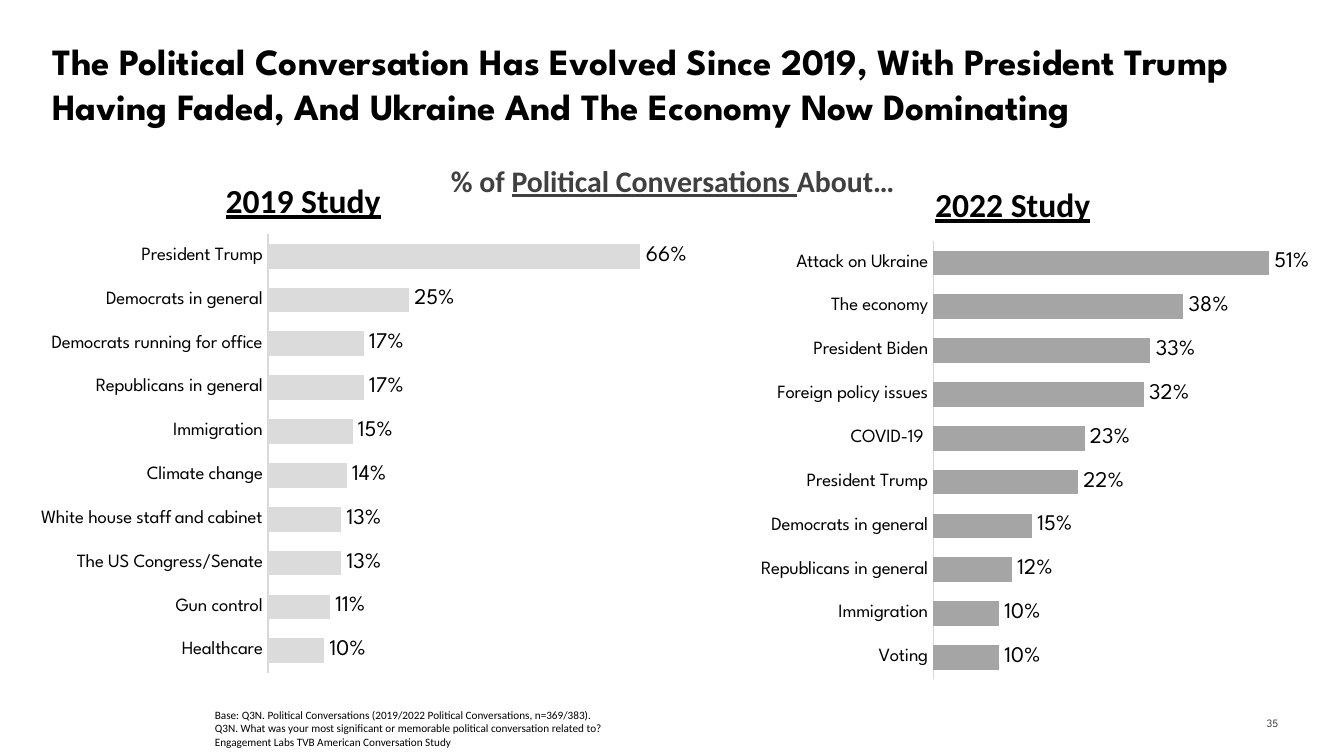
"""Build a slide comparing political conversation topics in 2019 and 2022."""
from lxml.etree import SubElement
from pptx import Presentation
from pptx.chart.data import CategoryChartData
from pptx.dml.color import RGBColor
from pptx.enum.chart import XL_CHART_TYPE, XL_LABEL_POSITION, XL_TICK_LABEL_POSITION, XL_TICK_MARK
from pptx.enum.text import MSO_ANCHOR, MSO_AUTO_SIZE, PP_ALIGN
from pptx.oxml.ns import qn
from pptx.util import Inches, Pt

HEADING_FONT = "League Spartan"
BODY_FONT = "Calibri"
BLACK = "000000"

TOPICS_2019 = {
    "President Trump": 0.66,
    "Democrats in general": 0.25,
    "Democrats running for office": 0.17,
    "Republicans in general": 0.17,
    "Immigration": 0.15,
    "Climate change": 0.14,
    "White house staff and cabinet": 0.13,
    "The US Congress/Senate": 0.13,
    "Gun control": 0.11,
    "Healthcare": 0.1,
}
TOPICS_2022 = {
    "Attack on Ukraine": 0.51,
    "The economy": 0.38,
    "President Biden": 0.33,
    "Foreign policy issues": 0.32,
    "COVID-19 ": 0.23,
    "President Trump": 0.22,
    "Democrats in general": 0.15,
    "Republicans in general": 0.12,
    "Immigration": 0.1,
    "Voting": 0.1,
}
FOOTNOTES = [
    "Base: Q3N. Political Conversations (2019/2022 Political Conversations, n=369/383).",
    "Q3N. What was your most significant or memorable political conversation related to?",
    "Engagement Labs TVB American Conversation Study",
]


def color(hex_string):
    """Return the colour for a hex string."""
    return RGBColor.from_string(hex_string)


def format_font(font, size, name=BODY_FONT, fill=BLACK, bold=False):
    """Apply size, typeface, colour and weight to a font."""
    font.size = Pt(size)
    font.name = name
    font.bold = bold
    font.color.rgb = color(fill)


def add_text(paragraph, text, underline=False, **style):
    """Append a formatted run to a paragraph."""
    run = paragraph.add_run()
    run.text = text
    format_font(run.font, **style)
    run.font.underline = underline


class SlideBuilder:
    """Hold the chart style and the current slide."""

    axis_color = "D9D9D9"
    gap_width = 77
    plot_area = {"x": 0.405, "y": 0.043, "w": 0.526, "h": 0.914}

    def __init__(self, slide):
        """Keep the slide to draw on."""
        self.slide = slide

    def title(self, text, left, top, width, height):
        """Fill and place the title placeholder."""
        shape = self.slide.shapes.title
        shape.left, shape.top = Inches(left), Inches(top)
        shape.width, shape.height = Inches(width), Inches(height)
        frame = shape.text_frame
        frame.auto_size = MSO_AUTO_SIZE.NONE
        frame.vertical_anchor = MSO_ANCHOR.MIDDLE
        paragraph = frame.paragraphs[0]
        paragraph.alignment = PP_ALIGN.LEFT
        add_text(paragraph, text, size=19.8, name=HEADING_FONT, bold=True)

    def text_box(self, lines, left, top, width, height, align=PP_ALIGN.LEFT,
                 anchor=MSO_ANCHOR.TOP, wrap=True, **style):
        """Add a box whose lines are lists of (text, underline) pairs."""
        shape = self.slide.shapes.add_textbox(
            Inches(left), Inches(top), Inches(width), Inches(height))
        frame = shape.text_frame
        frame.word_wrap = wrap
        frame.vertical_anchor = anchor
        for index, pieces in enumerate(lines):
            paragraph = frame.add_paragraph() if index else frame.paragraphs[0]
            paragraph.alignment = align
            for text, underline in pieces:
                add_text(paragraph, text, underline=underline, **style)

    def bar_chart(self, topics, left, top, bar_color, maximum):
        """Add a ranked horizontal bar chart of topic shares."""
        data = CategoryChartData(number_format="0%")
        data.categories = list(topics)
        data.add_series("Series 1", list(topics.values()))
        chart = self.slide.shapes.add_chart(
            XL_CHART_TYPE.BAR_CLUSTERED, Inches(left), Inches(top),
            Inches(5.59), Inches(3.57), data).chart
        chart.has_legend = False
        chart.has_title = False
        format_font(chart.font, size=10, name=HEADING_FONT)
        self.format_axes(chart, maximum)
        self.format_bars(chart.plots[0], bar_color)
        self.place_plot(chart)

    def format_axes(self, chart, maximum):
        """Rank topics from the top and hide the value axis."""
        category_axis = chart.category_axis
        category_axis.reverse_order = True
        category_axis.major_tick_mark = XL_TICK_MARK.NONE
        category_axis.minor_tick_mark = XL_TICK_MARK.NONE
        category_axis.tick_label_position = XL_TICK_LABEL_POSITION.NEXT_TO_AXIS
        category_axis.format.line.color.rgb = color(self.axis_color)
        category_axis.format.line.width = Pt(0.75)
        format_font(category_axis.tick_labels.font, size=10, name=HEADING_FONT)
        value_axis = chart.value_axis
        value_axis.minimum_scale = 0
        value_axis.maximum_scale = maximum
        value_axis.has_major_gridlines = False
        value_axis.visible = False

    def format_bars(self, plot, bar_color):
        """Colour the bars and label them with their values."""
        plot.gap_width = self.gap_width
        plot.vary_by_categories = False
        series = plot.series[0]
        series.format.fill.solid()
        series.format.fill.fore_color.rgb = color(bar_color)
        labels = series.data_labels
        labels.show_value = True
        labels.number_format = "0%"
        labels.number_format_is_linked = False
        labels.position = XL_LABEL_POSITION.OUTSIDE_END
        format_font(labels.font, size=12, name=HEADING_FONT)

    def place_plot(self, chart):
        """Fix the inner plot area within the chart."""
        plot_area = chart.plots[0]._element.getparent()
        layout = plot_area.find(qn("c:layout"))
        if layout is None:
            layout = SubElement(plot_area, qn("c:layout"))
            plot_area.insert(0, layout)
        manual = SubElement(layout, qn("c:manualLayout"))
        settings = {"layoutTarget": "inner", "xMode": "edge", "yMode": "edge", **self.plot_area}
        for tag, value in settings.items():
            SubElement(manual, qn(f"c:{tag}")).set("val", str(value))


def main():
    """Create the presentation and save it."""
    presentation = Presentation()
    presentation.slide_width = Inches(10)
    presentation.slide_height = Inches(10) * 9 // 16
    builder = SlideBuilder(presentation.slides.add_slide(presentation.slide_layouts[5]))
    builder.title(
        "The Political Conversation Has Evolved Since 2019, With President Trump "
        "Having Faded, And Ukraine And The Economy Now Dominating",
        0.29, 0.15, 9.5, 0.94)
    builder.bar_chart(TOPICS_2019, -0.27, 1.59, "DBDBDB", 0.7)
    builder.text_box(
        [[("% of ", False), ("Political Conversations ", True), ("About…", False)]],
        3.23, 1.16, 3.55, 0.37, align=PP_ALIGN.CENTER, wrap=False,
        size=16, fill="404040", bold=True)
    builder.bar_chart(TOPICS_2022, 4.68, 1.64, "A5A5A5", 0.6)
    builder.text_box([[("2019 Study", True)]], 1.58, 1.29, 2.18, 0.44, size=18, bold=True)
    builder.text_box([[("2022 Study", True)]], 6.86, 1.32, 2.38, 0.42, size=18, bold=True)
    builder.text_box([[(line, False)] for line in FOOTNOTES], 1.5, 5.22, 3.91, 0.4,
                     anchor=MSO_ANCHOR.BOTTOM, size=6)
    builder.text_box([[("35 ", False)]], 9.04, 5.23, 0.59, 0.3, align=PP_ALIGN.RIGHT,
                     anchor=MSO_ANCHOR.MIDDLE, size=6, name=HEADING_FONT, fill="3C3C3A")
    presentation.save("out.pptx")


if __name__ == "__main__":
    main()
